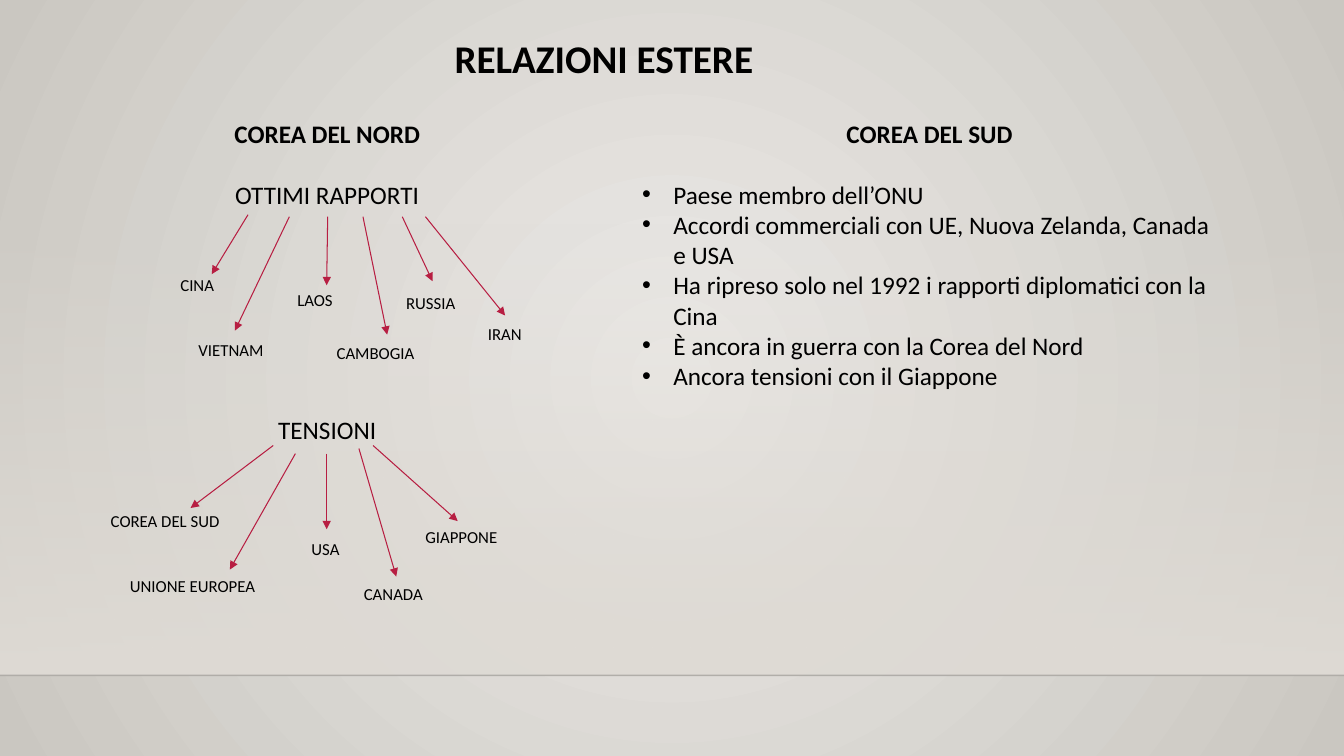
from lxml.etree import SubElement
from pptx import Presentation
from pptx.dml.color import RGBColor
from pptx.enum.shapes import MSO_CONNECTOR, MSO_SHAPE
from pptx.enum.text import PP_ALIGN
from pptx.oxml import parse_xml
from pptx.oxml.ns import nsdecls, qn
from pptx.util import Inches, Pt

BLACK = RGBColor(0x00, 0x00, 0x00)
CRIMSON = RGBColor(0xB7, 0x1E, 0x42)
CELL = Inches(0.1)  # side of one grid square
COLS, ROWS = 133.3, 75
FLOOR = 67
GAP = Pt(22)  # one empty line under a heading


def add_text(col, row, cols, rows, lines, size, bold=False, align=PP_ALIGN.LEFT):
    """Place a text box on the grid and return its paragraphs."""
    box = slide.shapes.add_textbox(*(round(n * CELL) for n in (col, row, cols, rows)))
    tf = box.text_frame
    tf.word_wrap = True
    tf.text = "\n".join(lines)
    for p in tf.paragraphs:
        p.alignment = align
        p.font.name = "Calibri"
        p.font.size = Pt(size)
        p.font.bold = bold
        p.font.color.rgb = BLACK
    return tf.paragraphs


def add_line(start, end, color, width):
    """Draw a straight line between two (column, row) points; return its a:ln."""
    line = slide.shapes.add_connector(
        MSO_CONNECTOR.STRAIGHT, *(round(n * CELL) for n in (*start, *end)))
    line.line.color.rgb = color
    line.line.width = Pt(width)
    SubElement(line._element.spPr, qn("a:effectLst"))
    return line._element.spPr.find(qn("a:ln"))


prs = Presentation()
prs.slide_width = round(COLS * CELL)
prs.slide_height = ROWS * CELL
slide = prs.slides.add_slide(prs.slide_layouts[6])

# Background: radial gradient, wall fading in, floor line
fill = slide.background.fill
fill.gradient()
bg_pr = slide.background._cSld.bg.bgPr
bg_pr.replace(bg_pr.find(qn("a:gradFill")), parse_xml(
    f'<a:gradFill {nsdecls("a")} rotWithShape="1"><a:gsLst>'
    '<a:gs pos="0"><a:srgbClr val="ECEAE7"/></a:gs>'
    '<a:gs pos="100000"><a:srgbClr val="CAC7C1"/></a:gs></a:gsLst>'
    '<a:path path="circle"><a:fillToRect l="50000" t="50000" r="50000" b="50000"/>'
    '</a:path></a:gradFill>'))

wall_top = 22.1
wall = slide.shapes.add_shape(
    MSO_SHAPE.RECTANGLE, 0, round(wall_top * CELL), prs.slide_width,
    round((FLOOR - wall_top) * CELL))
wall.shadow.inherit = False
wall.line.fill.background()
wall.fill.gradient()
wall.fill.gradient_angle = 270
for stop in wall.fill.gradient_stops:
    stop.color.rgb = RGBColor(0xDF, 0xDB, 0xD5)
clear_stop = wall._element.spPr.find(".//" + qn("a:srgbClr"))
SubElement(clear_stop, qn("a:alpha"), val="0")

floor_ln = add_line((0, FLOOR), (COLS, FLOOR), BLACK, 1)
SubElement(floor_ln.find(".//" + qn("a:srgbClr")), qn("a:alpha"), val="20000")

add_text(44.1, 2.9, 50.3, 5.7, ["RELAZIONI ESTERE"], 28, bold=True)

# North Korea: headings with arrows to countries
north = add_text(3.2, 11.2, 58.5, 40.4, ["COREA DEL NORD", "OTTIMI RAPPORTI"], 18,
                 align=PP_ALIGN.CENTER)
north[0].font.bold = True
north[1].space_before = GAP
add_text(3.2, 40.6, 58.5, 4, ["TENSIONI"], 18, align=PP_ALIGN.CENTER)

# country, label (column, row, width), arrow start, arrow end
RELATIONS = [
    ("CINA", (16.9, 26.8, 8.5), (24.6, 21.3), (21, 27.2)),
    ("VIETNAM", (18.7, 33.2, 11.8), (28.7, 21.5), (23.3, 32.8)),
    ("LAOS", (28.5, 28.3, 8.1), (32.5, 21.5), (32.4, 28.3)),
    ("CAMBOGIA", (32.4, 33.5, 15.8), (36, 21.5), (38.4, 33.2)),
    ("RUSSIA", (39.3, 28.6, 7.6), (39.9, 21.5), (42.9, 27.9)),
    ("IRAN", (47.4, 31.6, 12), (42.2, 21.5), (50.1, 31.3)),
    ("COREA DEL SUD", (10, 50.2, 17.7), (27.1, 44.2), (18.9, 50.4)),
    ("UNIONE EUROPEA", (11.9, 56.6, 17.3), (29.3, 45), (22.8, 56.5)),
    ("USA", (29.9, 53, 7.5), (32.4, 45), (32.4, 52.5)),
    ("CANADA", (35.1, 57.4, 12.5), (35.6, 44.5), (39.3, 57.2)),
    ("GIAPPONE", (41.2, 51.8, 14.5), (37, 44.2), (45.4, 51.7)),
]
for country, (col, row, cols), start, end in RELATIONS:
    arrow_ln = add_line(start, end, CRIMSON, 0.75)
    SubElement(arrow_ln, qn("a:tailEnd"), type="triangle")
    add_text(col, row, cols, 3, [country], 12)

# South Korea: heading and bullets
south = add_text(62.7, 11.2, 59, 63, [
    "COREA DEL SUD",
    "Paese membro dell’ONU",
    "Accordi commerciali con UE, Nuova Zelanda, Canada e USA",
    "Ha ripreso solo nel 1992 i rapporti diplomatici con la Cina",
    "È ancora in guerra con la Corea del Nord",
    "Ancora tensioni con il Giappone",
], 18)
south[0].alignment = PP_ALIGN.CENTER
south[0].font.bold = True
south[1].space_before = GAP
indent = round(3.1 * CELL)
for p in south[1:]:
    p_pr = p._p.get_or_add_pPr()
    p_pr.set("marL", str(indent))
    p_pr.set("indent", str(-indent))
    bullet_font = parse_xml(f'<a:buFont {nsdecls("a")} typeface="Arial"/>')
    bullet = parse_xml(f'<a:buChar {nsdecls("a")} char="•"/>')
    for element in (bullet_font, bullet):
        p_pr.insert_element_before(element, "a:tabLst", "a:defRPr", "a:extLst")

prs.save("out.pptx")
